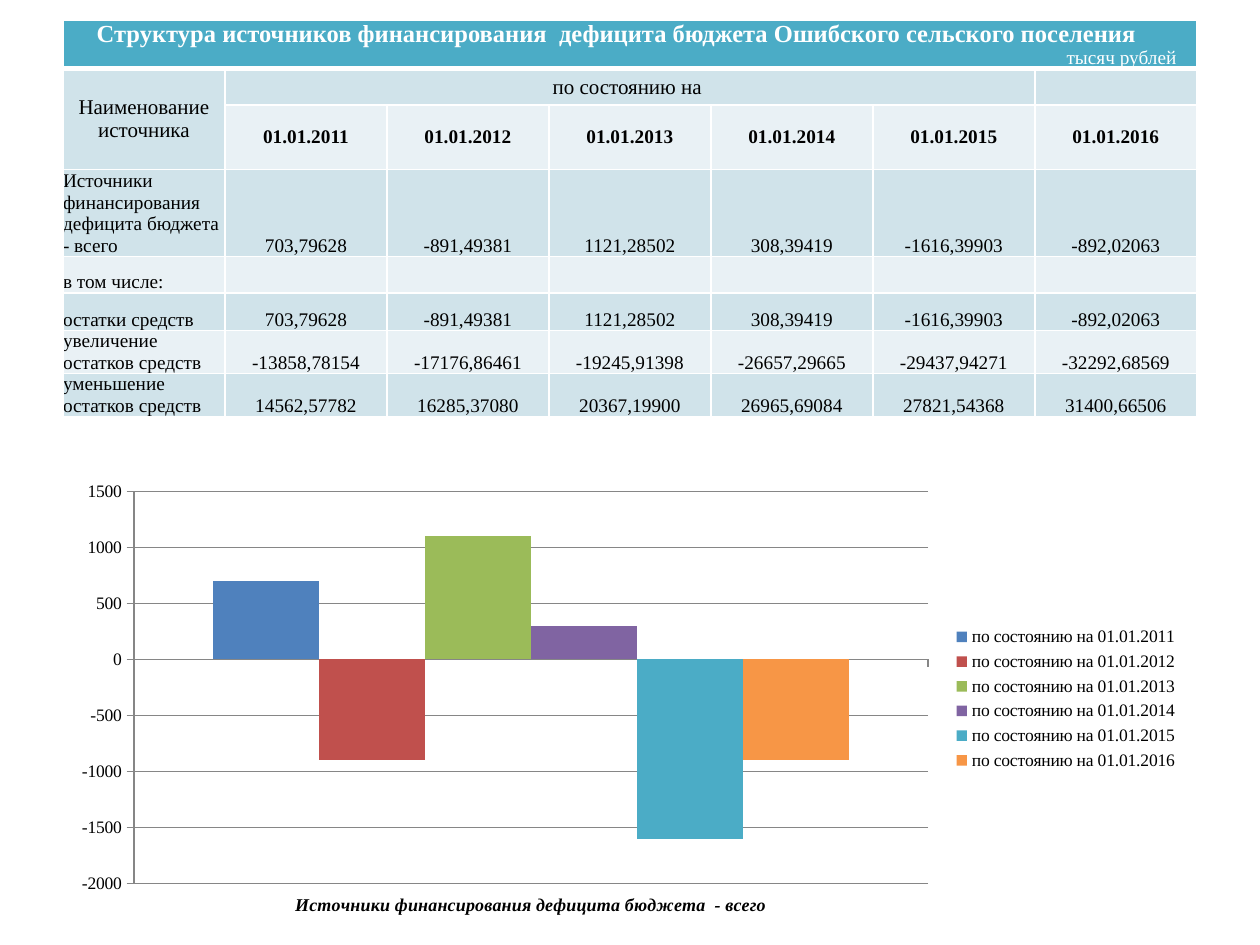
"""Builds the budget deficit financing slide: a table above a column chart."""
from lxml import etree
from pptx import Presentation
from pptx.chart.data import CategoryChartData
from pptx.dml.color import RGBColor
from pptx.enum.chart import XL_CHART_TYPE, XL_LEGEND_POSITION, XL_TICK_LABEL_POSITION, XL_TICK_MARK
from pptx.enum.text import MSO_ANCHOR, PP_ALIGN
from pptx.oxml.ns import qn
from pptx.util import Inches, Pt

LEFT, CENTER, RIGHT = PP_ALIGN.LEFT, PP_ALIGN.CENTER, PP_ALIGN.RIGHT
MIDDLE, BOTTOM = MSO_ANCHOR.MIDDLE, MSO_ANCHOR.BOTTOM
COLUMNS = XL_CHART_TYPE.COLUMN_CLUSTERED
LEGEND_RIGHT = XL_LEGEND_POSITION.RIGHT
LABELS_LOW = XL_TICK_LABEL_POSITION.LOW
TICK_OUT, TICK_NONE = XL_TICK_MARK.OUTSIDE, XL_TICK_MARK.NONE

GRID_COLS, GRID_ROWS = 100, 75
COLORS = {"title": "4BACC6", "dark": "D0E3EA", "light": "E9F1F5", "white": "FFFFFF",
          "text": "000000", "line": "868686"}
SERIES_COLORS = ["4F81BD", "C0504D", "9BBB59", "8064A2", "4BACC6", "F79646"]

TITLE = "Структура источников финансирования  дефицита бюджета Ошибского сельского поселения "
UNITS = "тысяч рублей"
STATE = "по состоянию на "
DATES = [f"01.01.{year}" for year in range(2011, 2017)]
TOTALS = ["703,79628", "-891,49381", "1121,28502", "308,39419", "-1616,39903", "-892,02063"]
BODY = [
    ["Источники финансирования дефицита бюджета - всего"] + TOTALS,
    ["в том числе:"] + [""] * len(DATES),
    ["остатки средств"] + TOTALS,
    ["увеличение остатков средств", "-13858,78154", "-17176,86461", "-19245,91398",
     "-26657,29665", "-29437,94271", "-32292,68569"],
    ["уменьшение остатков средств", "14562,57782", "16285,37080", "20367,19900",
     "26965,69084", "27821,54368", "31400,66506"],
]
ROW_HEIGHTS = [0.38, 0.29, 0.51, 0.69, 0.29, 0.3, 0.34, 0.34]
CHART_CATEGORY = "Источники финансирования дефицита бюджета  - всего"
CHART_VALUES = [700, -900, 1100, 300, -1600, -900]


class Deck:
    """Holds the style and the current slide."""

    def __init__(self, font="Times New Roman", width=10, height=7.5):
        self.font = font
        self.prs = Presentation()
        self.prs.slide_width, self.prs.slide_height = Inches(width), Inches(height)
        self.s = self.prs.slides.add_slide(self.prs.slide_layouts[6])

    def box(self, x, y, w, h):
        """Turns grid columns and rows into lengths."""
        col, row = self.prs.slide_width / GRID_COLS, self.prs.slide_height / GRID_ROWS
        return int(x * col), int(y * row), int(w * col), int(h * row)

    def style(self, font, size, color="text", bold=False, italic=False):
        """Formats any font object."""
        font.name, font.size, font.bold, font.italic = self.font, Pt(size), bold, italic
        font.color.rgb = RGBColor.from_string(COLORS[color])

    def line(self, fmt):
        """Draws a thin grey chart line."""
        fmt.line.color.rgb = RGBColor.from_string(COLORS["line"])
        fmt.line.width = Pt(0.75)

    def table(self, x, y, w, row_heights, cols):
        """Adds an empty table with equal columns."""
        heights = [Inches(h) for h in row_heights]
        left, top, width, _ = self.box(x, y, w, 0)
        tbl = self.s.shapes.add_table(len(heights), cols, left, top, width, sum(heights)).table
        for row, height in zip(tbl.rows, heights):
            row.height = height
        return tbl

    def cell(self, cell, text, fill, size=11, color="text", bold=False, align=CENTER,
             anchor=BOTTOM, top=1, bottom=1):
        """Fills a table cell and gives it white borders."""
        cell.margin_left = cell.margin_right = cell.margin_top = cell.margin_bottom = 0
        cell.vertical_anchor = anchor
        cell.text_frame.text = text
        for p in cell.text_frame.paragraphs:
            p.alignment = align
            for r in p.runs:
                self.style(r.font, size, color, bold)
            if not p.runs:
                etree.SubElement(p._p, qn("a:endParaRPr"), sz=str(size * 100))
        tcPr = cell._tc.get_or_add_tcPr()
        for side, width in zip("LRTB", (1, 1, top, bottom)):
            ln = etree.SubElement(tcPr, qn(f"a:ln{side}"), w=str(Pt(width)))
            solid = etree.SubElement(ln, qn("a:solidFill"))
            etree.SubElement(solid, qn("a:srgbClr"), val=COLORS["white"])
        cell.fill.solid()
        cell.fill.fore_color.rgb = RGBColor.from_string(COLORS[fill])

    def chart(self, x, y, w, h, category, series):
        """Adds a column chart with one category and a legend on the right."""
        data = CategoryChartData()
        data.categories = [category]
        for name, value, _ in series:
            data.add_series(name, [value])
        chart = self.s.shapes.add_chart(COLUMNS, *self.box(x, y, w, h), data).chart
        self.style(chart.font, 10)
        chart.has_title = False
        chart.has_legend = True
        chart.legend.position = LEGEND_RIGHT
        chart.legend.include_in_layout = False
        self.style(chart.legend.font, 10)
        plot = chart.plots[0]
        plot.gap_width, plot.overlap, plot.vary_by_categories = 150, 0, False
        for ser, (_, _, color) in zip(plot.series, series):
            ser.invert_if_negative = False
            ser.format.fill.solid()
            ser.format.fill.fore_color.rgb = RGBColor.from_string(color)
        cat, val = chart.category_axis, chart.value_axis
        for axis in (cat, val):
            axis.major_tick_mark, axis.minor_tick_mark = TICK_OUT, TICK_NONE
            self.line(axis.format)
        cat.tick_label_position = LABELS_LOW
        self.style(cat.tick_labels.font, 10.3, bold=True, italic=True)
        self.style(val.tick_labels.font, 10)
        val.minimum_scale, val.maximum_scale, val.major_unit = -2000, 1500, 500
        val.has_major_gridlines = True
        self.line(val.major_gridlines.format)


def add_sources_table(deck):
    """Adds the table of financing sources."""
    cols = len(DATES) + 1
    tbl = deck.table(5, 1.6, 90, ROW_HEIGHTS, cols)
    header = [[f"{TITLE}\n{UNITS}"] + [""] * len(DATES),
              ["Наименование источника", STATE] + [""] * (cols - 2),
              [""] + DATES]
    for i, row in enumerate(header + BODY):
        for j, text in enumerate(row):
            fill = "title" if i == 0 else "dark" if i % 2 else "light"
            deck.cell(tbl.cell(i, j), text, fill,
                      size=12 if i == 1 and text else 11,
                      color="white" if i == 0 else "text",
                      bold=i == 2,
                      align=LEFT if i > 2 and j == 0 else CENTER,
                      anchor=MIDDLE if i in (1, 2) else BOTTOM,
                      top=3 if i == 1 else 1, bottom=3 if i == 0 else 1)
    title, units = tbl.cell(0, 0).text_frame.paragraphs
    deck.style(title.runs[0].font, 14, "white", bold=True)
    title._p.get_or_add_pPr().set("marR", str(Inches(0.16)))
    units.alignment = RIGHT
    for first, last in (((0, 0), (0, cols - 1)), ((1, 0), (2, 0)), ((1, 1), (1, 5))):
        tbl.cell(*first).merge(tbl.cell(*last))


def main():
    deck = Deck()
    add_sources_table(deck)
    names = [f"{STATE}{date}" for date in DATES]
    deck.chart(4.7, 37.5, 89.8, 35.9, CHART_CATEGORY,
               list(zip(names, CHART_VALUES, SERIES_COLORS)))
    deck.prs.save("out.pptx")


if __name__ == "__main__":
    main()
